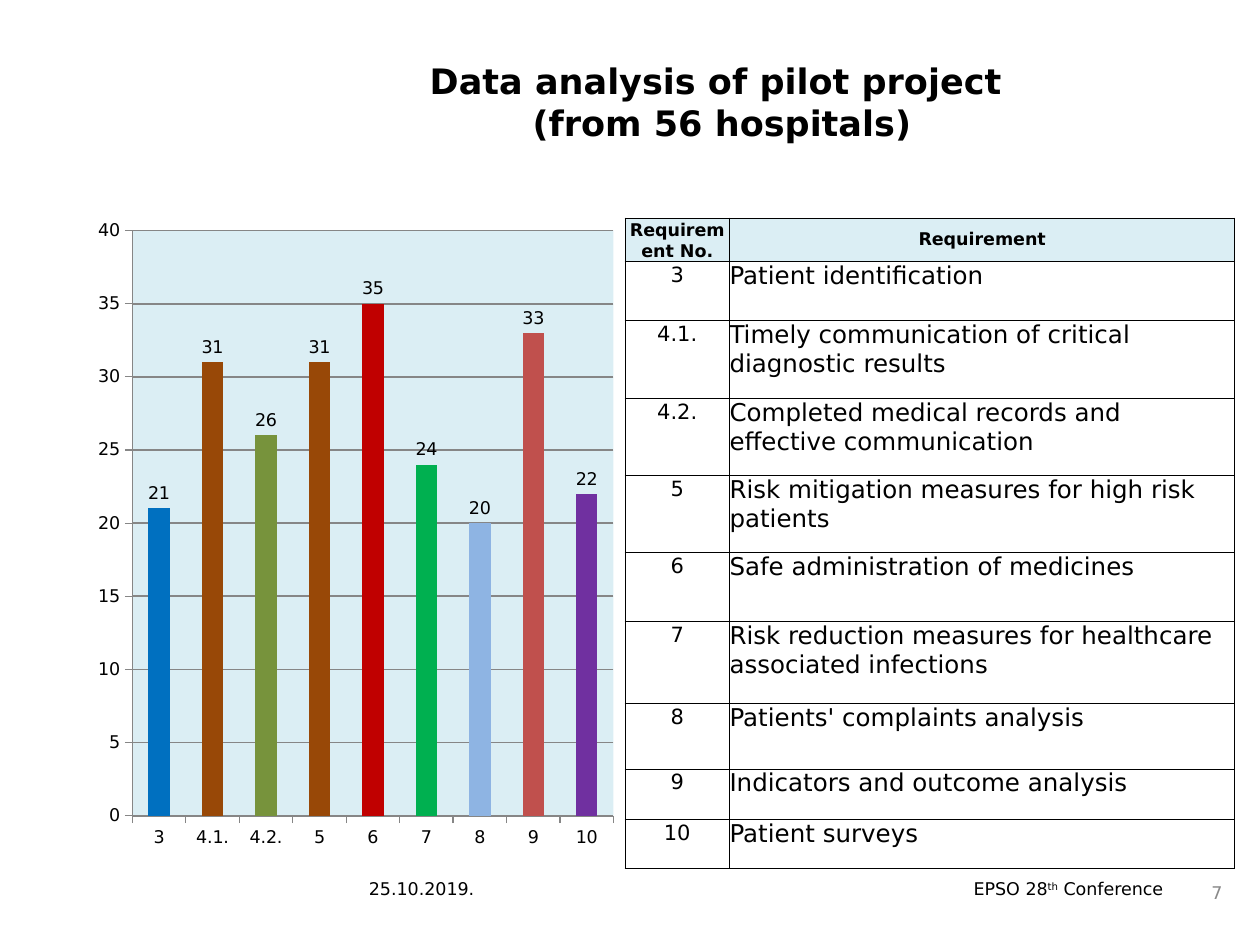
from lxml import etree
from pptx import Presentation, util as u
from pptx.chart.data import CategoryChartData
from pptx.dml.color import RGBColor
from pptx.enum import chart as ch, text as t
from pptx.oxml import parse_xml
from pptx.oxml.ns import nsdecls, qn

UNIT = u.Inches(0.1)
COLS, ROWS = 100, 75
FONT = "DejaVu Sans"
BLACK, GREY, LINE, PALE = "000000", "898989", "868686", "DBEEF4"

REQUIREMENTS = [
    ("3", "Patient identification", 21, "0070C0", 4.7),
    ("4.1.", "Timely communication of critical diagnostic results", 31, "984807", 6.2),
    ("4.2.", "Completed medical records and effective communication", 26, "77933C", 6.1),
    ("5", "Risk mitigation measures for high risk patients", 31, "984807", 6.1),
    ("6", "Safe administration of medicines", 35, "C00000", 5.5),
    ("7", "Risk reduction measures for healthcare associated infections", 24, "00B050", 6.5),
    ("8", "Patients' complaints analysis", 20, "8EB4E3", 5.2),
    ("9", "Indicators and outcome analysis", 33, "C0504D", 4),
    ("10", "Patient surveys", 22, "7030A0", 3.9),
]


def rgb(value):
    return RGBColor.from_string(value)


def grid(*cells):
    return [round(c * UNIT) for c in cells]


def style(font, size, color=BLACK, bold=False):
    font.name, font.size, font.bold = FONT, u.Pt(size), bold
    font.color.rgb = rgb(color)


def add_text(s, box, runs, size, align, color=BLACK, bold=False, anchor=t.MSO_ANCHOR.TOP):
    tf = s.shapes.add_textbox(*grid(*box)).text_frame
    tf.word_wrap = True
    tf.vertical_anchor = anchor
    p = tf.paragraphs[0]
    p.alignment = align
    style(p.font, size, color, bold)
    for i, line in enumerate(runs[0].split("\n")):
        if i:
            p.add_line_break()
        p.add_run().text = line
    for content, baseline in runs[1:]:
        r = p.add_run()
        r.text = content
        if baseline:
            r.font._element.set("baseline", str(baseline))


def add_footer(s, box):
    x, y, w, h = box
    add_text(s, (x, y, 21.7, h), ["25.10.2019."], 10, t.PP_ALIGN.LEFT)
    add_text(s, (x + 25, y, 40, h), ["EPSO 28", ("th", 30000), (" Conference", 0)],
             10, t.PP_ALIGN.RIGHT)
    add_text(s, (x + w - 4.7, y, 4.7, h), ["7"], 10, t.PP_ALIGN.RIGHT, GREY,
             anchor=t.MSO_ANCHOR.MIDDLE)


def set_plot_area(chart, x, y, w, h):
    area = chart._chartSpace.chart.plotArea
    for old in area.findall(qn("c:layout")):
        area.remove(old)
    sizes = "".join(f'<c:{k} val="{v}"/>' for k, v in zip("xywh", (x, y, w, h)))
    area.insert(0, parse_xml(
        f'<c:layout {nsdecls("c")}><c:manualLayout><c:layoutTarget val="inner"/>'
        f'<c:xMode val="edge"/><c:yMode val="edge"/>{sizes}</c:manualLayout></c:layout>'))
    area.append(parse_xml(
        f'<c:spPr {nsdecls("c", "a")}><a:solidFill><a:srgbClr val="{PALE}"/></a:solidFill>'
        '<a:ln><a:noFill/></a:ln></c:spPr>'))


def add_bars(s, box):
    data = CategoryChartData()
    data.categories = [r[0] for r in REQUIREMENTS]
    data.add_series("Series 1", [r[2] for r in REQUIREMENTS])
    chart = s.shapes.add_chart(ch.XL_CHART_TYPE.COLUMN_CLUSTERED, *grid(*box), data).chart
    chart.has_legend = chart.has_title = False
    style(chart.font, 10)
    set_plot_area(chart, 0.09, 0.02, 0.88, 0.93)

    value = chart.value_axis
    value.minimum_scale, value.maximum_scale, value.major_unit = 0, 40, 5
    value.has_major_gridlines = True
    lines = [value.major_gridlines.format.line]
    for axis in (value, chart.category_axis):
        axis.major_tick_mark = ch.XL_TICK_MARK.OUTSIDE
        lines.append(axis.format.line)
    for line in lines:
        line.color.rgb = rgb(LINE)
        line.width = u.Pt(0.75)
    lines[0].width = u.Pt(1)

    plot = chart.plots[0]
    plot.gap_width = 150
    plot.vary_by_categories = False
    plot.has_data_labels = True
    plot.data_labels.show_value = True
    plot.data_labels.position = ch.XL_LABEL_POSITION.OUTSIDE_END
    style(plot.data_labels.font, 10)
    series = plot.series[0]
    series.format.fill.solid()
    series.format.fill.fore_color.rgb = rgb("C0504D")
    for i, row in enumerate(REQUIREMENTS):
        fill = series.points[i].format.fill
        fill.solid()
        fill.fore_color.rgb = rgb(row[3])


def add_borders(cell):
    tcPr = cell._tc.get_or_add_tcPr()
    for i, side in enumerate(("lnL", "lnR", "lnT", "lnB")):
        ln = etree.Element(qn(f"a:{side}"), w=str(u.Pt(0.5)))
        fill = etree.SubElement(ln, qn("a:solidFill"))
        etree.SubElement(fill, qn("a:srgbClr"), val=BLACK)
        tcPr.insert(i, ln)


def fill_cell(cell, content, size, align, anchor, margin, header):
    cell.text = content
    cell.vertical_anchor = anchor
    cell.margin_left = cell.margin_right = cell.margin_top = u.Inches(margin)
    cell.margin_bottom = 0
    if header:
        cell.fill.solid()
        cell.fill.fore_color.rgb = rgb(PALE)
    else:
        cell.fill.background()
    p = cell.text_frame.paragraphs[0]
    p.alignment = align
    style(p.font, size, bold=header)
    add_borders(cell)


def add_requirements(s, box):
    x, y, w, h = box
    table = s.shapes.add_table(len(REQUIREMENTS) + 1, 2, *grid(*box)).table
    table.first_row = table.horz_banding = False
    number_width = 8.3
    table.columns[0].width, table.columns[1].width = grid(number_width, w - number_width)
    body = [(no, name) for no, name, *_ in REQUIREMENTS]
    heights = [3.1] + [r[4] for r in REQUIREMENTS]
    center, top = t.PP_ALIGN.CENTER, t.MSO_ANCHOR.TOP
    for i, (no, name) in enumerate([("Requirement No.", "Requirement")] + body):
        head = i == 0
        table.rows[i].height = grid(heights[i])[0]
        fill_cell(table.cell(i, 0), no, 10 if head else 12, center,
                  t.MSO_ANCHOR.BOTTOM if head else top, 0.01, head)
        fill_cell(table.cell(i, 1), name, 10 if head else 14,
                  center if head else t.PP_ALIGN.LEFT,
                  t.MSO_ANCHOR.MIDDLE if head else top, 0, head)


def main():
    prs = Presentation()
    prs.slide_width, prs.slide_height = grid(COLS, ROWS)
    s = prs.slides.add_slide(prs.slide_layouts[6])
    add_text(s, (19.6, 4.2, 75.4, 11.3),
             ["Data analysis of pilot project \n(from 56 hospitals)"],
             20, t.PP_ALIGN.CENTER, bold=True)
    add_footer(s, (28.3, 69.2, 69.7, 3.3))
    add_bars(s, (6.6, 17.3, 43.4, 50))
    add_requirements(s, (49.6, 17.3, 48.4, 51.6))
    prs.save("out.pptx")


if __name__ == "__main__":
    main()
